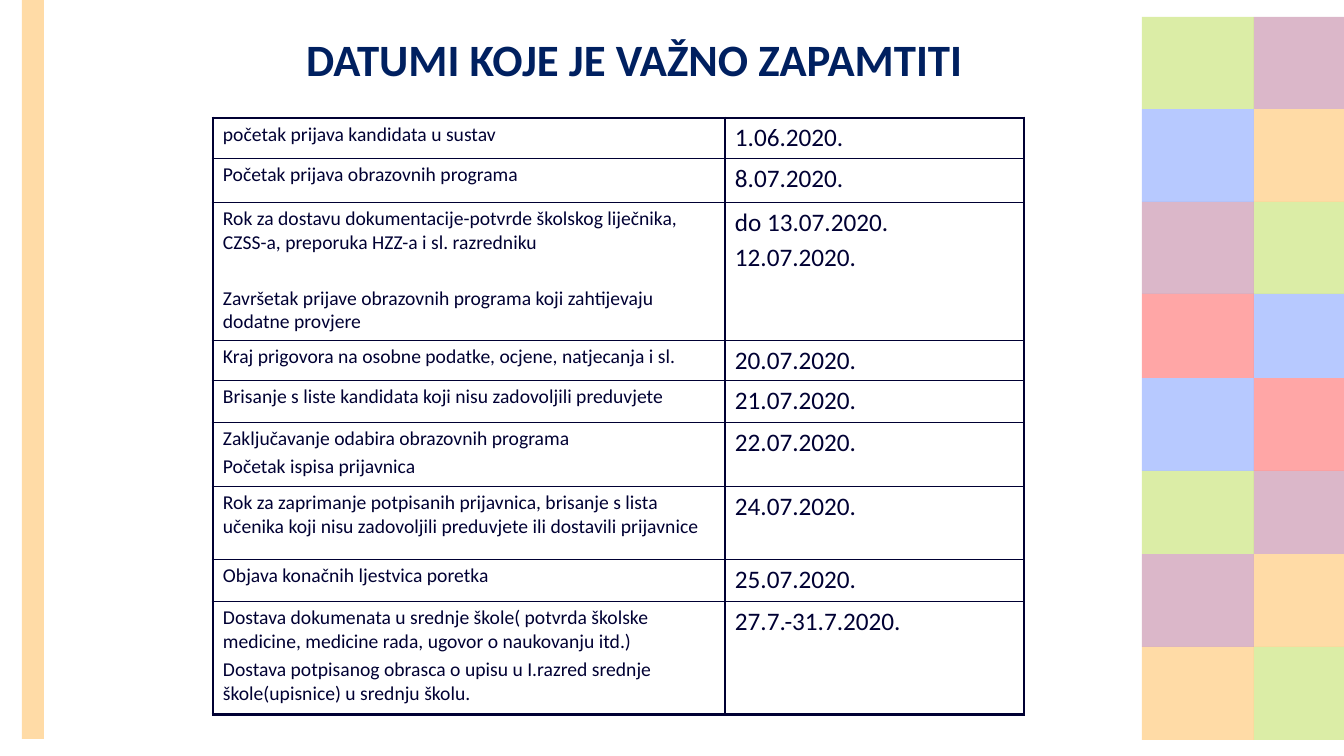
from dataclasses import dataclass
from itertools import pairwise

from pptx import Presentation
from pptx.dml.color import RGBColor
from pptx.enum.shapes import MSO_SHAPE
from pptx.enum.text import MSO_ANCHOR, PP_ALIGN
from pptx.oxml.ns import qn
from pptx.util import Emu, Pt
from lxml.etree import SubElement

TITLE = "DATUMI KOJE JE VAŽNO ZAPAMTITI"

# Row height, tasks, dates
DATES = [
    (40, ["početak prijava kandidata u sustav"], ["1.06.2020."]),
    (44, ["Početak prijava obrazovnih programa"], ["8.07.2020."]),
    (138, ["Rok za dostavu dokumentacije-potvrde školskog liječnika, "
           "CZSS-a, preporuka HZZ-a i sl. razredniku",
           "Završetak prijave obrazovnih programa koji zahtijevaju dodatne provjere"],
     ["do 13.07.2020.", "12.07.2020."]),
    (40, ["Kraj prigovora na osobne podatke, ocjene, natjecanja i sl."], ["20.07.2020."]),
    (42, ["Brisanje s liste kandidata koji nisu zadovoljili preduvjete"], ["21.07.2020."]),
    (64, ["Zaključavanje odabira obrazovnih programa", "Početak ispisa prijavnica"],
     ["22.07.2020."]),
    (73, ["Rok za zaprimanje potpisanih prijavnica, brisanje s lista učenika "
          "koji nisu zadovoljili preduvjete ili dostavili prijavnice"], ["24.07.2020."]),
    (42, ["Objava konačnih ljestvica poretka"], ["25.07.2020."]),
    (113, ["Dostava dokumenata u srednje škole( potvrda školske medicine, "
           "medicine rada, ugovor o naukovanju itd.)",
           "Dostava potpisanog obrasca o upisu u I.razred srednje "
           "škole(upisnice) u srednju školu."], ["27.7.-31.7.2020."]),
]
WIDE_GAP_ROW, WIDE_GAP = 2, 22.6

TILE_EDGES = [17, 109, 202, 294, 378, 471, 554, 647, 740]
TILE_COLUMNS = [
    (1142, 112, "green blue plum red blue green plum orange"),
    (1254, 90, "plum orange green blue red plum orange green"),
]


@dataclass(frozen=True)
class Theme:
    font: str = "Calibri"
    title: str = "002060"
    ink: str = "000033"
    title_size: int = 32
    cell_sizes: tuple = (14, 18)
    thin: float = 1
    thick: float = 2.25
    tile_alpha: int = 35


THEME = Theme()
TILE_COLOURS = {"green": "99CC00", "plum": "993366", "blue": "3366FF",
                "orange": "FF9900", "red": "FF0000"}


def px(n):
    return Emu(round(n * 914400 / 100.8))


def set_font(p, size, colour, bold=False):
    p.font.name = THEME.font
    p.font.size = Pt(size)
    p.font.bold = bold
    p.font.color.rgb = RGBColor.from_string(colour)


def add_tile(slide, left, top, width, height, colour):
    s = slide.shapes.add_shape(MSO_SHAPE.RECTANGLE, *map(px, (left, top, width, height)))
    s.shadow.inherit = False
    s.line.fill.background()
    s.fill.solid()
    s.fill.fore_color.rgb = RGBColor.from_string(TILE_COLOURS[colour])
    rgb = s.fill._xPr.find(".//" + qn("a:srgbClr"))
    SubElement(rgb, qn("a:alpha"), val=str(THEME.tile_alpha * 1000))


def add_title(slide):
    tf = slide.shapes.add_textbox(px(244), px(7), px(781), px(103)).text_frame
    tf.word_wrap = True
    tf.vertical_anchor = MSO_ANCHOR.MIDDLE
    p = tf.paragraphs[0]
    p.text = TITLE
    p.alignment = PP_ALIGN.CENTER
    set_font(p, THEME.title_size, THEME.title, bold=True)


def set_borders(cell, thick_sides):
    tc_pr = cell._tc.get_or_add_tcPr()
    for side in "LRTB":
        width = THEME.thick if side in thick_sides else THEME.thin
        ln = SubElement(tc_pr, qn("a:ln" + side), w=str(Pt(width)))
        SubElement(SubElement(ln, qn("a:solidFill")), qn("a:srgbClr"), val=THEME.ink)


def fill_cell(cell, lines, size, gap):
    cell.margin_left = cell.margin_right = px(10)
    cell.margin_top = cell.margin_bottom = px(5)
    tf = cell.text_frame
    for i, line in enumerate(lines):
        p = tf.add_paragraph() if i else tf.paragraphs[0]
        p.text = line
        if i:
            p.space_before = Pt(gap)
        set_font(p, size, THEME.ink)


def add_dates(slide):
    widths = (512, 299)
    height = sum(row[0] for row in DATES)
    table = slide.shapes.add_table(len(DATES), len(widths), px(213), px(118),
                                   px(sum(widths)), px(height)).table
    table.first_row = table.horz_banding = False
    for column, width in zip(table.columns, widths):
        column.width = px(width)
    for r, (row_height, *texts) in enumerate(DATES):
        table.rows[r].height = px(row_height)
        for c, (lines, size) in enumerate(zip(texts, THEME.cell_sizes)):
            cell = table.cell(r, c)
            wide = r == WIDE_GAP_ROW and c == 0
            fill_cell(cell, lines, size, WIDE_GAP if wide else size * 0.2)
            outer = "LR"[c] + "T" * (r == 0) + "B" * (r == len(DATES) - 1)
            set_borders(cell, outer)
            cell.fill.background()


def main():
    prs = Presentation()
    prs.slide_width, prs.slide_height = px(1344), px(756)
    slide = prs.slides.add_slide(prs.slide_layouts[6])
    for left, width, colours in TILE_COLUMNS:
        for (top, bottom), colour in zip(pairwise(TILE_EDGES), colours.split()):
            add_tile(slide, left, top, width, bottom - top, colour)
    add_tile(slide, 22, 0, 22, 739, "orange")
    add_title(slide)
    add_dates(slide)
    prs.save("out.pptx")


if __name__ == "__main__":
    main()
